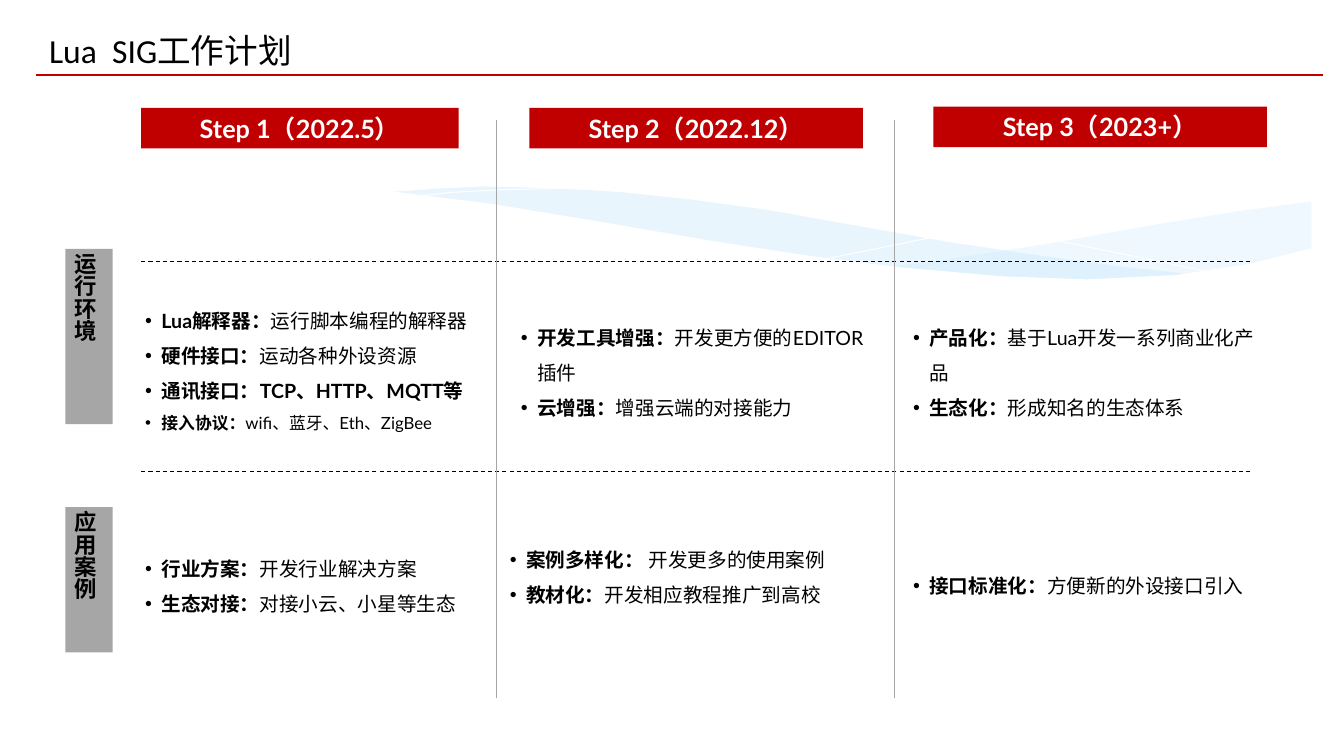
from lxml.etree import SubElement
from pptx import Presentation
from pptx.dml.color import RGBColor
from pptx.enum.dml import MSO_LINE
from pptx.enum.shapes import MSO_CONNECTOR, MSO_SHAPE
from pptx.enum.text import MSO_ANCHOR, PP_ALIGN
from pptx.oxml.ns import qn
from pptx.util import Cm, Pt

RED, GREY, BLACK, WHITE, BLUE = "C00000", "A6A6A6", "000000", "FFFFFF", "C6E7FC"

RIGHT = [(33.02, 5.08), (31.17, 5.33), (29.13, 5.66), (26.37, 6.15), (23.9, 6.53),
         (22.4, 6.73), (23.88, 6.88), (25.63, 7.01), (27.56, 7.06), (29.24, 6.99),
         (30.94, 6.78), (32.16, 6.53), (33.05, 6.27), (33.05, 5.08)]
LEFT = [(30.23, 6.93), (28.35, 6.73), (26.26, 6.45), (23.9, 6.1), (21.31, 5.64),
        (19.28, 5.28), (17.42, 5.03), (15.72, 4.85), (14.22, 4.75), (12.24, 4.7),
        (11.1, 4.75), (9.7, 4.85), (11.58, 5.05), (13.69, 5.36), (15.21, 5.64),
        (17.93, 6.1), (20.37, 6.48), (22.53, 6.76), (24.46, 6.96), (26.16, 7.04),
        (27.69, 7.06), (29.03, 7.04)]
FALL = [(10.46, 4.95), (11.35, 4.85), (12.67, 4.78), (14.1, 4.75), (15.88, 4.8),
        (18.03, 4.93), (20.6, 5.18), (23.55, 5.56), (26.92, 6.12), (29.41, 6.63),
        (30.73, 6.91)]
RISE = [(20.78, 6.53), (23.55, 5.97), (26.29, 5.49), (29.34, 5.05), (31.29, 4.83),
        (33.02, 4.7)]
BASE = [(33.07, 6.25), (31.5, 6.65), (29.64, 6.93), (27.38, 7.04), (25.2, 6.96),
        (22.63, 6.73), (20.42, 6.45), (17.93, 6.07), (15.14, 5.59), (12.34, 5.13),
        (9.91, 4.83), (7.16, 4.67), (4.47, 4.72), (2.57, 4.95), (1.37, 5.21),
        (0.79, 5.41), (0.79, 8.36), (33.07, 8.36)]

HEADS = [
    ((3.56, 2.72, 8, 1.02), "Step 1（2022.5）"),
    ((13.34, 2.72, 8.41, 1.02), "Step 2（2022.12）"),
    ((23.52, 2.69, 8.41, 1.02), "Step 3（2023+）"),
]
SIDES = [
    ((1.65, 6.27, 1.19, 4.42), "运行环境"),
    ((1.65, 12.78, 1.19, 3.66), "应用案例"),
]
CELLS = [
    ((3.56, 7.29, 8.61, 3.81), [
        ("Lua解释器：", "运行脚本编程的解释器", 14),
        ("硬件接口：", "运动各种外设资源", 14),
        ("通讯接口：TCP、HTTP、MQTT等", "", 14),
        ("接入协议：", "wifi、蓝牙、Eth、ZigBee", 12)]),
    ((13.03, 7.29, 8.99, 3.91), [
        ("开发工具增强：", "开发更方便的EDITOR插件", 14),
        ("云增强：", "增强云端的对接能力", 14)]),
    ((22.91, 7.29, 8.99, 3.91), [
        ("产品化：", "基于Lua开发一系列商业化产品", 14),
        ("生态化：", "形成知名的生态体系", 14)]),
    ((3.56, 12.12, 8.61, 5), [
        ("行业方案：", "开发行业解决方案", 14),
        ("生态对接：", "对接小云、小星等生态", 14)]),
    ((12.75, 11.89, 8.99, 5), [
        ("案例多样化：", " 开发更多的使用案例", 14),
        ("教材化：", "开发相应教程推广到高校", 14)]),
    ((22.91, 12.12, 8.99, 5), [
        ("接口标准化：", "方便新的外设接口引入", 14)]),
]


def tint(code):
    return RGBColor.from_string(code)


def write(para, text, size=14, color=BLACK, bold=False, font="Lato"):
    run = para.add_run()
    run.text = text
    run.font.name = font
    run.font.size = Pt(size)
    run.font.bold = bold
    run.font.color.rgb = tint(color)


def setup(shape, anchor, inset=None):
    frame = shape.text_frame
    frame.word_wrap = True
    frame.vertical_anchor = anchor
    if inset is not None:
        frame.margin_left = frame.margin_right = Cm(inset)
        frame.margin_top = frame.margin_bottom = Cm(inset)
    return frame


def block(slide, box, fill):
    shape = slide.shapes.add_shape(MSO_SHAPE.RECTANGLE, *map(Cm, box))
    shape.shadow.inherit = False
    shape.fill.solid()
    shape.fill.fore_color.rgb = tint(fill)
    shape.line.fill.background()
    return shape


def rule(slide, ends, color, width=0.75, dash=False):
    line = slide.shapes.add_connector(MSO_CONNECTOR.STRAIGHT, *map(Cm, ends))
    line.line.color.rgb = tint(color)
    line.line.width = Pt(width)
    if dash:
        line.line.dash_style = MSO_LINE.DASH
    SubElement(line._element.spPr, qn("a:effectLst"))


def curve(slide, points, fill=None, alpha=100):
    spots = [(Cm(x), Cm(y)) for x, y in points]
    path = slide.shapes.build_freeform(*spots[0], scale=1.0)
    path.add_line_segments(spots[1:], close=fill is not None)
    shape = path.convert_to_shape()
    shape.shadow.inherit = False
    if fill is None:
        shape.fill.background()
        shape.line.color.rgb = tint(WHITE)
        shape.line.width = Pt(0)
        return
    shape.line.fill.background()
    shape.fill.solid()
    shape.fill.fore_color.rgb = tint(fill)
    if alpha < 100:
        color = shape._element.spPr.find(qn("a:solidFill"))[0]
        SubElement(color, qn("a:alpha"), val=str(alpha * 1000))


def waves(slide):
    curve(slide, RIGHT, BLUE, 29)
    curve(slide, LEFT, BLUE, 40)
    curve(slide, FALL)
    curve(slide, RISE)
    curve(slide, BASE, WHITE)


def title(slide, box, text):
    left, top, width, height = box
    rule(slide, (left - 0.08, top + 1.24, left + 32.36, top + 1.24), RED, 1.5)
    frame = setup(slide.shapes.add_textbox(*map(Cm, box)), MSO_ANCHOR.TOP)
    write(frame.paragraphs[0], text, size=24, font="Calibri")


def head(slide, box, text):
    frame = setup(block(slide, box, RED), MSO_ANCHOR.TOP)
    para = frame.paragraphs[0]
    para.alignment = PP_ALIGN.CENTER
    write(para, text, size=18, color=WHITE, bold=True)


def side(slide, box, text):
    frame = setup(block(slide, box, GREY), MSO_ANCHOR.MIDDLE, 0.1)
    frame._txBody.bodyPr.set("vert", "eaVert")
    para = frame.paragraphs[0]
    para.alignment = PP_ALIGN.CENTER
    para.line_spacing = 1.3
    write(para, text, size=16, bold=True)


def cell(slide, box, items):
    frame = setup(slide.shapes.add_textbox(*map(Cm, box)), MSO_ANCHOR.MIDDLE, 0.1)
    for index, (label, body, size) in enumerate(items):
        para = frame.add_paragraph() if index else frame.paragraphs[0]
        para.line_spacing = 1.5
        props = para._p.get_or_add_pPr()
        props.set("marL", str(Cm(0.41)))
        props.set("indent", str(-Cm(0.41)))
        SubElement(props, qn("a:buFont"), typeface="Arial")
        SubElement(props, qn("a:buChar"), char="•")
        write(para, label, size=size, bold=True)
        if body:
            write(para, body, size=size)


def grid(slide, box):
    left, top, width, height = box
    for y in (6.6, 11.89):
        rule(slide, (left, y, left + width, y), BLACK, dash=True)
    for x in (12.52, 22.53):
        rule(slide, (x, top, x, top + height), GREY)


def main():
    deck = Presentation()
    deck.slide_width, deck.slide_height = Cm(33.87), Cm(19.05)
    slide = deck.slides.add_slide(deck.slide_layouts[6])
    waves(slide)
    title(slide, (0.99, 0.64, 17.32, 2.31), "Lua  SIG工作计划")
    grid(slide, (3.56, 3.02, 27.99, 14.58))
    for draw, parts in ((head, HEADS), (side, SIDES), (cell, CELLS)):
        for box, text in parts:
            draw(slide, box, text)
    deck.save("out.pptx")


if __name__ == "__main__":
    main()
